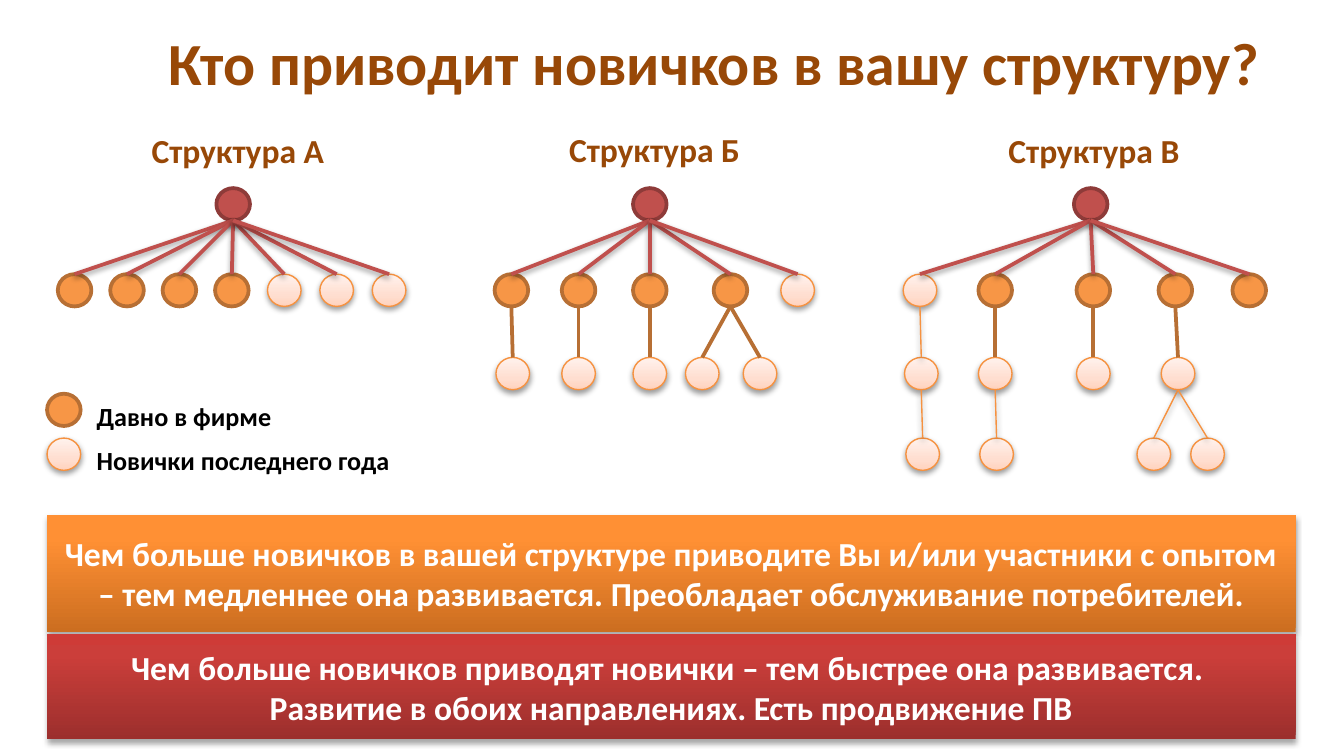
from pptx import Presentation
from pptx.dml.color import RGBColor
from pptx.enum.shapes import MSO_CONNECTOR as LINK, MSO_SHAPE as SHAPE
from pptx.enum.text import MSO_ANCHOR as ANCHOR, MSO_AUTO_SIZE as FIT, PP_ALIGN as ALIGN
from pptx.oxml.ns import qn
from pptx.util import Inches, Pt
from lxml.etree import SubElement

BROWN = "984807"
PEACH = [(0, "FFD2BD"), (35, "FFDED0"), (100, "FFF2ED")]
ORANGE_BAR = [(0, "CC6E20"), (80, "FF9034"), (100, "FF9136")]
RED_BAR = [(0, "9C2F2D"), (80, "CB3E3A"), (100, "CE3B37")]

# Circle and outgoing link styles by role
CIRCLES = {
    "leader": dict(fill="C0504D", line="8E3B39", width=2),
    "veteran": dict(fill="F79646", line="B76F34", width=2),
    "novice": dict(fill=PEACH, line="F69240", width=0.75, shadow=38),
}
LINKS = {
    "leader": dict(line="C0504D", width=2, shadow=38),
    "veteran": dict(line="B76F34", width=2),
    "novice": dict(line="F69240", width=0.75, shadow=38),
}
CIRCLE_W, CIRCLE_H = Inches(0.25), Inches(0.24)
ROW_TOPS = [1.4, 2.04, 2.66, 3.26]


def paint(item, fill=None, line=None, width=1, shadow=0):
    """Set solid or gradient fill, outline and shadow strength in percent."""
    props = item._element.spPr
    if isinstance(fill, str):
        item.fill.solid()
        item.fill.fore_color.rgb = RGBColor.from_string(fill)
    elif fill:
        item.fill.gradient()
        item.fill.gradient_angle = 90
        stops = props.find(qn("a:gradFill")).find(qn("a:gsLst"))
        for stop in list(stops):
            stops.remove(stop)
        for position, color in fill:
            stop = SubElement(stops, qn("a:gs"), pos=str(position * 1000))
            SubElement(stop, qn("a:srgbClr"), val=color)
    if line:
        item.line.color.rgb = RGBColor.from_string(line)
        item.line.width = Pt(width)
    else:
        item.line.fill.background()
    effects = SubElement(props, qn("a:effectLst"))
    if shadow:
        outer = SubElement(effects, qn("a:outerShdw"), blurRad=str(Pt(3.1)),
                           dist=str(Pt(1.7)), dir="5400000", rotWithShape="0")
        black = SubElement(outer, qn("a:srgbClr"), val="000000")
        SubElement(black, qn("a:alpha"), val=str(shadow * 1000))


def write(box, text, size=18, color=BROWN, align=ALIGN.CENTER,
          anchor=ANCHOR.TOP, wrap=True, fit=FIT.SHAPE_TO_FIT_TEXT):
    frame = box.text_frame
    frame.word_wrap = wrap
    frame.auto_size = fit
    frame.vertical_anchor = anchor
    para = frame.paragraphs[0]
    para.text = text
    para.alignment = align
    for span in para.runs:
        span.font.name = "Calibri"
        span.font.size = Pt(size)
        span.font.bold = True
        span.font.color.rgb = RGBColor.from_string(color)


# Widescreen 16:9 page
deck = Presentation()
deck.slide_width = Inches(10)
deck.slide_height = Inches(10 * 9 / 16)
page = deck.slides.add_slide(deck.slide_layouts[5])

# Title
title = page.shapes.title
title.left, title.top = Inches(1.22), Inches(0.15)
title.width, title.height = Inches(8.19), Inches(0.62)
title.text_frame.margin_left = title.text_frame.margin_right = 0
title.text_frame.margin_top = title.text_frame.margin_bottom = Inches(0.04)
write(title, "Кто приводит новичков в вашу структуру?", size=32, wrap=False)

# Conclusion bars
for top, height, fill, text in [
    (3.83, 0.87, ORANGE_BAR,
     "Чем больше новичков в вашей структуре приводите Вы и/или участники с опытом"
     " – тем медленнее она развивается. Преобладает обслуживание потребителей."),
    (4.72, 0.78, RED_BAR,
     "Чем больше новичков приводят новички – тем быстрее она развивается. \v"
     "Развитие в обоих направлениях. Есть продвижение ПВ"),
]:
    bar = page.shapes.add_shape(SHAPE.RECTANGLE, Inches(0.35), Inches(top),
                                Inches(9.29), Inches(height))
    paint(bar, fill=fill, shadow=35)
    write(bar, text, color="FFFFFF", anchor=ANCHOR.MIDDLE, fit=FIT.NONE)

# Trees: each member is (left, row, role, index of the parent in the list)
trees = [
    ("Структура А", 0.83, 0.92,
     [(1.61, 0, "leader", None)]
     + [(0.43 + 0.39 * i, 1, "veteran" if i < 4 else "novice", 0) for i in range(7)]),
    ("Структура Б", 3.93, 0.91,
     [(4.71, 0, "leader", None),
      (3.68, 1, "veteran", 0), (4.18, 1, "veteran", 0), (4.71, 1, "veteran", 0),
      (5.31, 1, "veteran", 0), (5.81, 1, "novice", 0),
      (3.69, 2, "novice", 1), (4.18, 2, "novice", 2), (4.71, 2, "novice", 3),
      (5.1, 2, "novice", 4), (5.53, 2, "novice", 4)]),
    ("Структура В", 7.2, 0.92,
     [(7.99, 0, "leader", None),
      (6.72, 1, "novice", 0), (7.28, 1, "veteran", 0), (8.01, 1, "veteran", 0),
      (8.62, 1, "veteran", 0), (9.17, 1, "veteran", 0),
      (6.73, 2, "novice", 1), (7.28, 2, "novice", 2), (8.01, 2, "novice", 3),
      (8.64, 2, "novice", 4),
      (6.74, 3, "novice", 6), (7.29, 3, "novice", 7),
      (8.46, 3, "novice", 9), (8.86, 3, "novice", 9)]),
]
for name, left, top, members in trees:
    caption = page.shapes.add_textbox(Inches(left), Inches(top), Inches(1.88), Inches(0.4))
    write(caption, name)
    circles = []
    for x, row, role, _ in members:
        circle = page.shapes.add_shape(SHAPE.OVAL, Inches(x), Inches(ROW_TOPS[row]),
                                       CIRCLE_W, CIRCLE_H)
        paint(circle, **CIRCLES[role])
        circles.append(circle)
    for circle, (_, _, _, parent) in zip(circles, members):
        if parent is None:
            continue
        start = circles[parent]
        link = page.shapes.add_connector(
            LINK.STRAIGHT, start.left + CIRCLE_W // 2, start.top + CIRCLE_H,
            circle.left + CIRCLE_W // 2, circle.top)
        link.end_connect(circle, 0)
        paint(link, **LINKS[members[parent][2]])

# Legend
for top, role, text, width, height in [
    (2.93, "veteran", "Давно в фирме", 1.81, 0.34),
    (3.26, "novice", "Новички последнего года", 2.73, 0.57),
]:
    sample = page.shapes.add_shape(SHAPE.OVAL, Inches(0.35), Inches(top), CIRCLE_W, CIRCLE_H)
    paint(sample, **CIRCLES[role])
    label = page.shapes.add_textbox(Inches(0.62), Inches(top), Inches(width), Inches(height))
    write(label, text, size=14, color="000000", align=ALIGN.LEFT)

deck.save("out.pptx")
